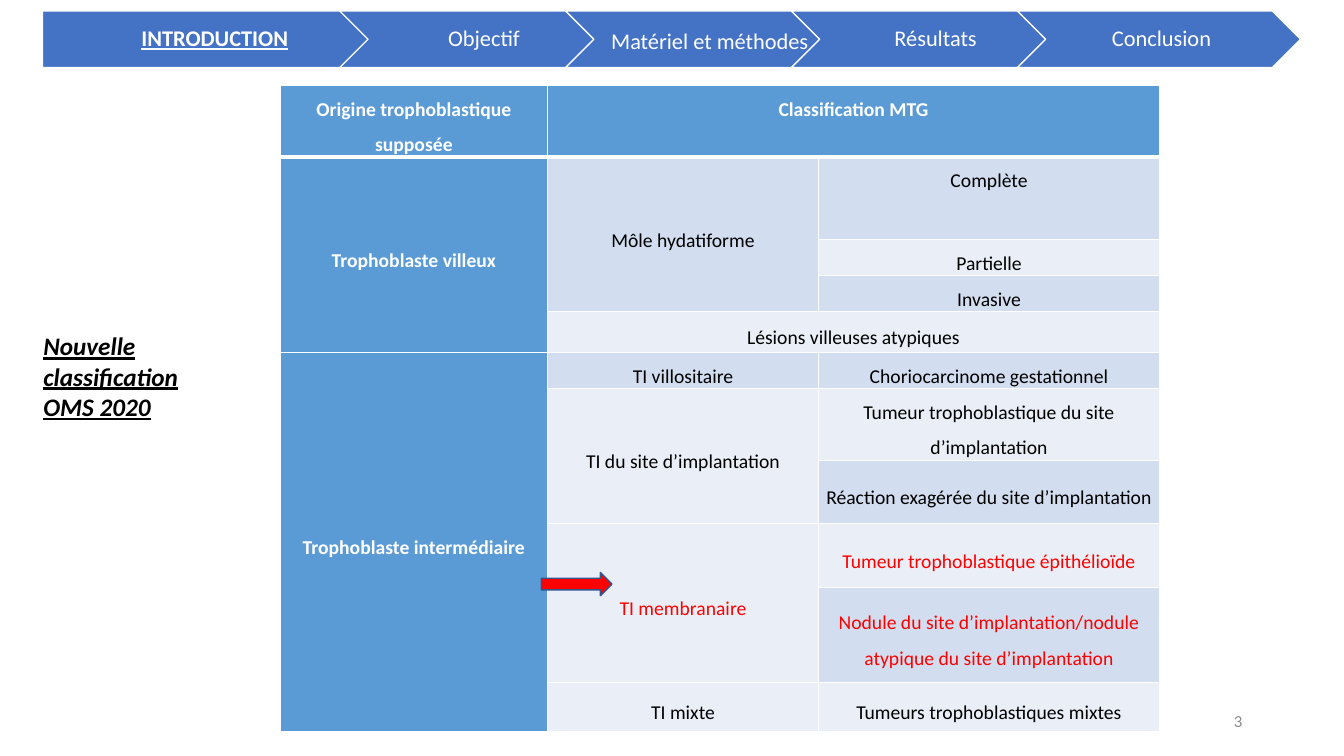
"""Build the slide on the 2020 WHO classification of trophoblastic disease."""
import dataclasses

import lxml.etree
import pptx
import pptx.dml.color
import pptx.enum.shapes
import pptx.enum.text
import pptx.oxml.ns
import pptx.util

Inches = pptx.util.Inches
Pt = pptx.util.Pt
RGBColor = pptx.dml.color.RGBColor
MSO_SHAPE = pptx.enum.shapes.MSO_SHAPE
ALIGN = pptx.enum.text.PP_ALIGN
ANCHOR = pptx.enum.text.MSO_ANCHOR
qn = pptx.oxml.ns.qn


@dataclasses.dataclass(frozen=True)
class Theme:
    font: str = "Calibri"
    white: str = "FFFFFF"
    black: str = "000000"
    red: str = "FF0000"
    grey: str = "8C8C8C"
    step: str = "4472C4"
    arrow_line: str = "325491"
    header: str = "5B9BD5"
    dark_band: str = "D2DEEF"
    light_band: str = "EAEFF7"
    title_size: int = 18
    step_size: int = 16
    table_size: int = 14
    number_size: int = 12


theme = Theme()


def format_text(text_frame, size, color, align, bold=False, underline=False):
    for paragraph in text_frame.paragraphs:
        paragraph.alignment = align
        for run in paragraph.runs:
            run.font.name = theme.font
            run.font.size = Pt(size)
            run.font.bold = bold
            run.font.underline = underline
            run.font.color.rgb = RGBColor.from_string(color)


def add_filled_shape(kind, left, top, width, height, fill, line):
    shape = slide.shapes.add_shape(kind, Inches(left), Inches(top), Inches(width), Inches(height))
    shape.shadow.inherit = False
    shape.fill.solid()
    shape.fill.fore_color.rgb = RGBColor.from_string(fill)
    shape.line.color.rgb = RGBColor.from_string(line)
    shape.line.width = Pt(1)
    return shape


presentation = pptx.Presentation()
presentation.slide_width = Inches(13.33)
presentation.slide_height = Inches(7.5)
slide = presentation.slides.add_slide(presentation.slide_layouts[5])

title = slide.shapes.title
title.left, title.top, title.width, title.height = map(Inches, (0.33, 3.23, 1.81, 1.01))
title.text_frame.text = "Nouvelle classification OMS 2020"
title.text_frame.word_wrap = True
title.text_frame.auto_size = pptx.enum.text.MSO_AUTO_SIZE.NONE
title.text_frame.vertical_anchor = ANCHOR.TOP
format_text(title.text_frame, theme.title_size, theme.black, ALIGN.LEFT, bold=True, underline=True)
title.text_frame.paragraphs[0].runs[0].font.italic = True

column_widths = [2.65, 2.69, 3.38]
row_heights = [0.54, 0.82, 0.32, 0.32, 0.41, 0.32, 0.63, 0.63, 0.63, 0.95, 0.48]
table = slide.shapes.add_table(
    len(row_heights), len(column_widths), Inches(2.78), Inches(0.85),
    Inches(sum(column_widths)), Inches(sum(row_heights)),
).table
for column, width in zip(table.columns, column_widths):
    column.width = Inches(width)
for row, height in zip(table.rows, row_heights):
    row.height = Inches(height)

for row_index in range(len(row_heights)):
    for column_index in range(len(column_widths)):
        properties = table.cell(row_index, column_index)._tc.get_or_add_tcPr()
        for side in ("lnL", "lnR", "lnT", "lnB"):
            is_header_rule = (row_index, side) in ((0, "lnB"), (1, "lnT"))
            border = lxml.etree.SubElement(properties, qn(f"a:{side}"), w=str(Pt(3 if is_header_rule else 1)))
            border_fill = lxml.etree.SubElement(border, qn("a:solidFill"))
            lxml.etree.SubElement(border_fill, qn("a:srgbClr"), val=theme.white)

header, dark, light = theme.header, theme.dark_band, theme.light_band
white, black, red = theme.white, theme.black, theme.red
classification = [
    (0, 0, 1, 1, "Origine trophoblastique supposée", header, white),
    (0, 1, 1, 2, "Classification MTG", header, white),
    (1, 0, 4, 1, "Trophoblaste villeux", header, white),
    (1, 1, 3, 1, "Môle hydatiforme", dark, black),
    (1, 2, 1, 1, "Complète", dark, black),
    (2, 2, 1, 1, "Partielle", light, black),
    (3, 2, 1, 1, "Invasive", dark, black),
    (4, 1, 1, 2, "Lésions villeuses atypiques", light, black),
    (5, 0, 6, 1, "Trophoblaste intermédiaire", header, white),
    (5, 1, 1, 1, "TI villositaire", dark, black),
    (5, 2, 1, 1, "Choriocarcinome gestationnel", dark, black),
    (6, 1, 2, 1, "TI du site d’implantation", light, black),
    (6, 2, 1, 1, "Tumeur trophoblastique du site d’implantation", light, black),
    (7, 2, 1, 1, "Réaction exagérée du site d’implantation", dark, black),
    (8, 1, 2, 1, "TI membranaire", light, red),
    (8, 2, 1, 1, "Tumeur trophoblastique épithélioïde", light, red),
    (9, 2, 1, 1, "Nodule du site d’implantation/nodule atypique du site d’implantation", dark, red),
    (10, 1, 1, 1, "TI mixte", light, black),
    (10, 2, 1, 1, "Tumeurs trophoblastiques mixtes", light, black),
]
for row_index, column_index, row_span, column_span, text, fill, color in classification:
    cell = table.cell(row_index, column_index)
    if row_span * column_span > 1:
        cell.merge(table.cell(row_index + row_span - 1, column_index + column_span - 1))
    cell.fill.solid()
    cell.fill.fore_color.rgb = RGBColor.from_string(fill)
    cell.margin_left = cell.margin_right = Inches(0.07)
    cell.margin_top = cell.margin_bottom = 0
    cell.vertical_anchor = ANCHOR.TOP if row_index == 0 or text == "Complète" else ANCHOR.MIDDLE
    cell.text_frame.text = text
    cell.text_frame.paragraphs[0].line_spacing = 1.5
    cell.text_frame.paragraphs[0].space_after = Pt(8)
    format_text(cell.text_frame, theme.table_size, color, ALIGN.CENTER, bold=fill == header)

add_filled_shape(MSO_SHAPE.RIGHT_ARROW, 5.37, 5.68, 0.7, 0.23, theme.red, theme.arrow_line)

step_names = ["INTRODUCTION", "Objectif", "Matériel et méthodes", "Résultats", "Conclusion"]
chevron_left, chevron_pitch = 3.37, 2.24
for index, name in enumerate(step_names):
    is_current = index == 0
    kind = MSO_SHAPE.PENTAGON if is_current else MSO_SHAPE.CHEVRON
    left = 0.42 if is_current else chevron_left + (index - 1) * chevron_pitch
    step = add_filled_shape(kind, left, 0.11, 3.49 if is_current else 2.81, 0.56, theme.step, theme.white)
    text_frame = step.text_frame
    text_frame.word_wrap = True
    text_frame.vertical_anchor = ANCHOR.MIDDLE
    text_frame.margin_left = Inches(0.09 if is_current else 0.07)
    text_frame.margin_right = Inches(0.02)
    text_frame.margin_top = Inches(0.1 if name == "Matériel et méthodes" else 0.05)
    text_frame.margin_bottom = Inches(0.05)
    text_frame.text = name
    text_frame.paragraphs[0].line_spacing = 0.9
    format_text(text_frame, theme.step_size, theme.white, ALIGN.CENTER, bold=is_current, underline=is_current)

number_box = slide.shapes.add_textbox(Inches(9.42), Inches(6.95), Inches(3), Inches(0.4))
number_box.text_frame.word_wrap = True
number_box.text_frame.vertical_anchor = ANCHOR.MIDDLE
number_box.text_frame.text = "3"
format_text(number_box.text_frame, theme.number_size, theme.grey, ALIGN.RIGHT)

presentation.save("out.pptx")
